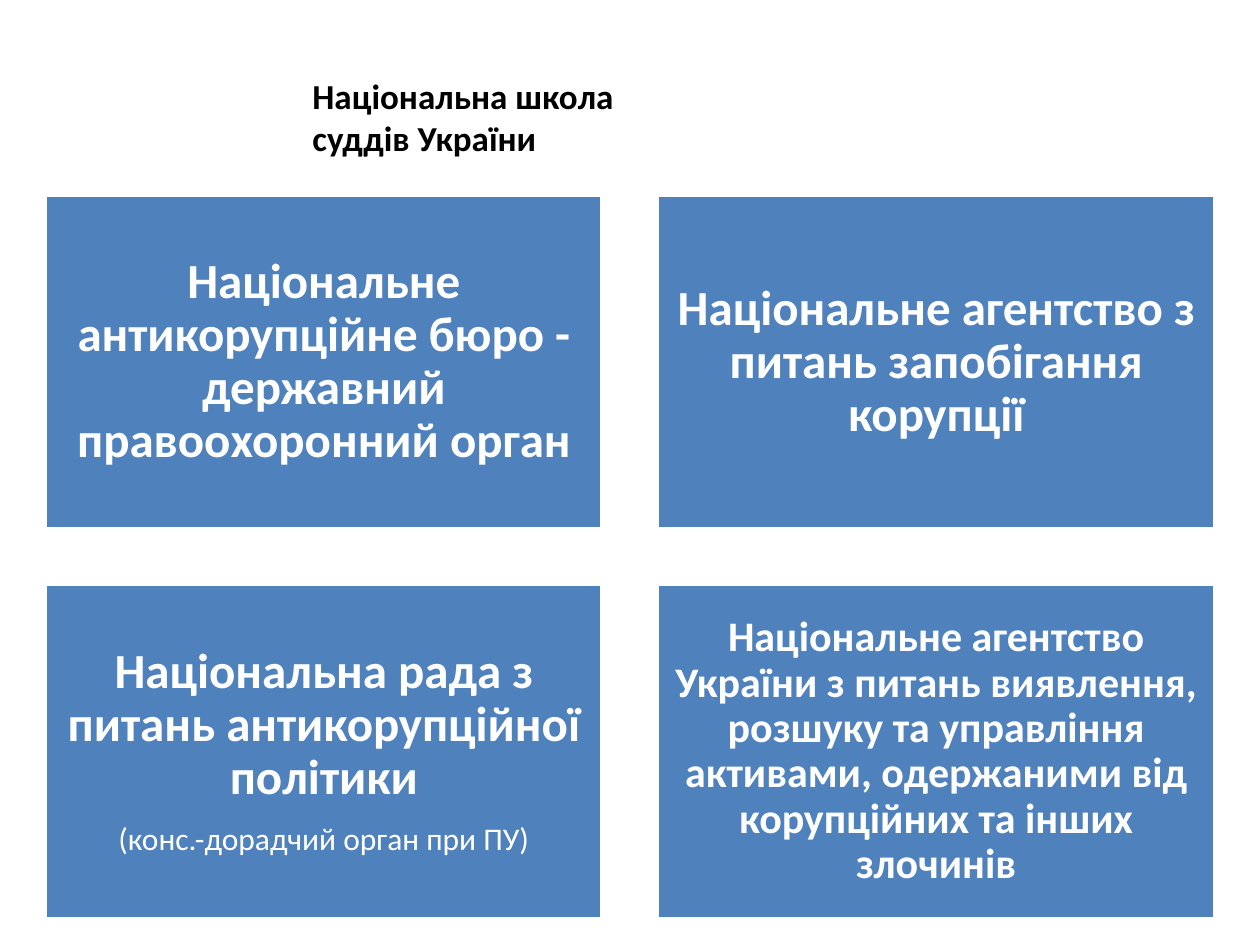
from dataclasses import dataclass

from pptx import Presentation
from pptx.dml.color import RGBColor
from pptx.enum import shapes, text
from pptx.util import Inches, Pt

FONT = "Calibri"
BLUE, WHITE, BLACK = "4F81BD", "FFFFFF", "000000"
LEFT, TOP = 0.36, 1.55
WIDTH, HEIGHT, GAP = 4.42, 2.65, 0.44
COLS = 2


@dataclass
class Body:
    name: str
    size: int = 28
    inset: float = 0.12
    note: str = ""


BODIES = [
    Body("Національне антикорупційне бюро - державний правоохоронний орган"),
    Body("Національне агентство з питань запобігання корупції"),
    Body("Національна рада з питань антикорупційної політики",
         note="(конс.-дорадчий орган при ПУ)"),
    Body("Національне агентство України з питань виявлення, розшуку та "
         "управління активами, одержаними від корупційних та інших злочинів",
         size=24, inset=0.1),
]


def color(code: str) -> RGBColor:
    return RGBColor.from_string(code)


def write(para, words: str, *, size: int, ink: str = WHITE, bold: bool = True,
          align=text.PP_ALIGN.CENTER, lines: float = 0.9, after: float = 0) -> None:
    para.text = words
    para.alignment = align
    para.line_spacing = lines
    para.space_after = Pt(after)
    font = para.font
    font.name, font.size, font.bold = FONT, Pt(size), bold
    font.color.rgb = color(ink)


def set_frame(frame, left: float, top: float, right: float, bottom: float) -> None:
    """Wrap the text, centre it vertically and set its margins in inches."""
    frame.word_wrap = True
    frame.vertical_anchor = text.MSO_ANCHOR.MIDDLE
    frame.margin_left, frame.margin_right = Inches(left), Inches(right)
    frame.margin_top, frame.margin_bottom = Inches(top), Inches(bottom)


def add_title(slide) -> None:
    box = slide.shapes.add_textbox(Inches(0.5), Inches(0.3), Inches(9), Inches(1.25))
    frame = box.text_frame
    set_frame(frame, 1.98, 0.05, 0.1, 0.05)
    write(frame.paragraphs[0], "Національна школа\vсуддів України", size=20,
          ink=BLACK, align=text.PP_ALIGN.LEFT, lines=1.0)


def add_body(slide, body: Body, row: int, col: int) -> None:
    box = slide.shapes.add_shape(
        shapes.MSO_SHAPE.RECTANGLE,
        Inches(LEFT + col * (WIDTH + GAP)), Inches(TOP + row * (HEIGHT + GAP)),
        Inches(WIDTH), Inches(HEIGHT))
    box.shadow.inherit = False
    box.fill.solid()
    box.fill.fore_color.rgb = color(BLUE)
    box.line.color.rgb = color(WHITE)
    box.line.width = Pt(2)
    frame = box.text_frame
    set_frame(frame, *[body.inset] * 4)
    write(frame.paragraphs[0], body.name, size=body.size,
          after=10 if body.note else 0)
    if body.note:
        write(frame.add_paragraph(), body.note, size=18, bold=False)


def main() -> None:
    deck = Presentation()
    deck.slide_width, deck.slide_height = Inches(10), Inches(7.5)
    slide = deck.slides.add_slide(deck.slide_layouts[6])
    add_title(slide)
    for i, body in enumerate(BODIES):
        add_body(slide, body, *divmod(i, COLS))
    deck.save("out.pptx")


if __name__ == "__main__":
    main()
